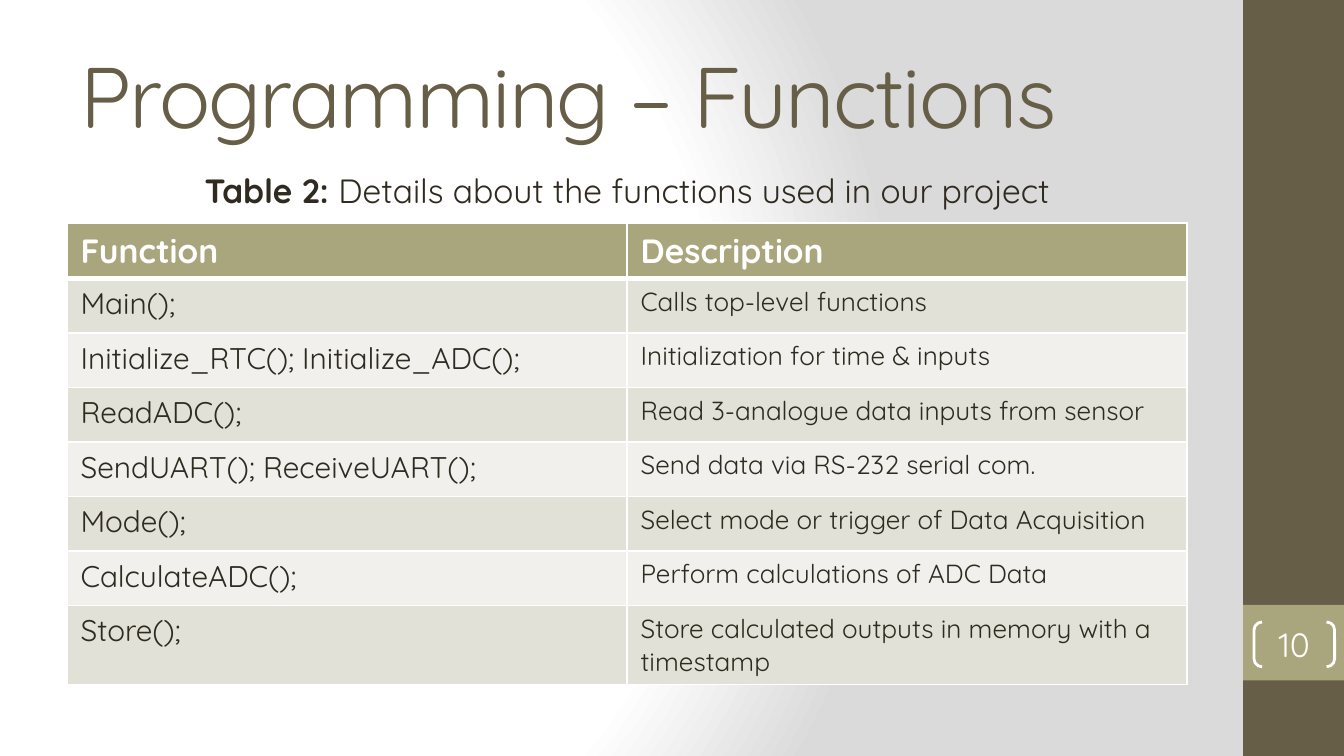
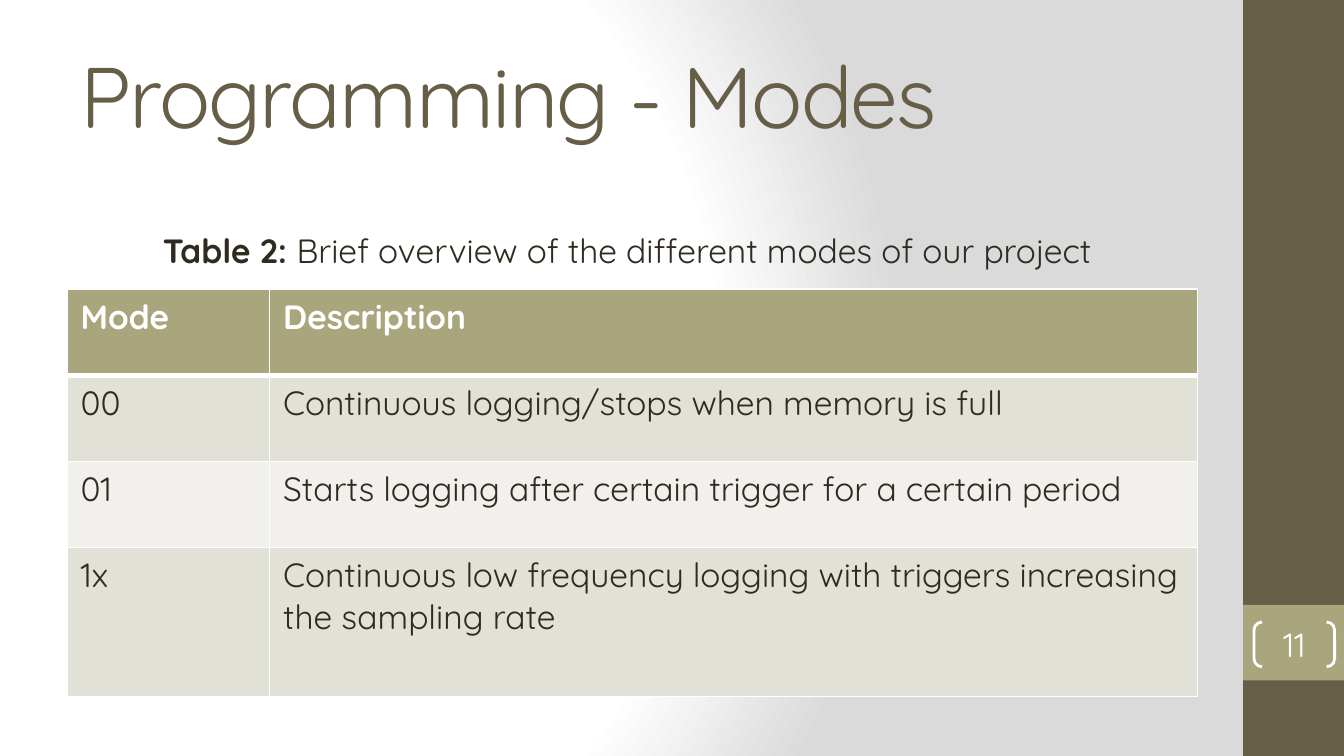
from dataclasses import dataclass

from lxml import etree
from pptx import Presentation
from pptx.dml.color import RGBColor
from pptx.enum import shapes, text
from pptx.oxml import parse_xml
from pptx.oxml import ns
from pptx.util import Pt

# Shared look
FONT = "Quicksand"
BROWN = RGBColor(0x67, 0x5E, 0x47)
OLIVE = RGBColor(0xA9, 0xA5, 0x7C)
INK = RGBColor(0x2F, 0x2B, 0x20)
WHITE = RGBColor(0xFF, 0xFF, 0xFF)
GREY = RGBColor(0xDA, 0xDA, 0xDA)
ROW_FILLS = (RGBColor(0xE2, 0xE1, 0xD7), RGBColor(0xF1, 0xF0, 0xEC))

SLIDE_WIDTH, SLIDE_HEIGHT = 720, 405
MARGIN = 36
CONTENT_WIDTH = 600
TITLE_ONLY = 5


@dataclass(frozen=True)
class Frame:
    left: float
    top: float
    width: float
    height: float

    def lengths(self) -> tuple:
        return Pt(self.left), Pt(self.top), Pt(self.width), Pt(self.height)


@dataclass(frozen=True)
class TablePage:
    title: str
    number: int
    caption: str
    caption_top: float
    table_top: float
    columns: tuple
    row_heights: tuple
    body_sizes: tuple
    rows: tuple


SIDE_BAND = Frame(666, 0, 54, SLIDE_HEIGHT)
NUMBER_BAND = Frame(666, 324, 54, 40.5)
NUMBER_BRACKETS = Frame(671.8, 333.2, 43.2, 24)
TITLE_FRAME = Frame(MARGIN, 16.8, CONTENT_WIDTH, 67.5)

PAGES = (
    TablePage(
        title="Programming – Functions",
        number=10,
        caption="Details about the functions used in our project",
        caption_top=87.4,
        table_top=119.4,
        columns=(300, 300),
        row_heights=(29.2,) * 8,
        body_sizes=(16, 14),
        rows=(
            ("Function", "Description"),
            ("Main();", "Calls top-level functions"),
            ("Initialize_RTC(); Initialize_ADC();", "Initialization for time & inputs"),
            ("ReadADC();", "Read 3-analogue data inputs from sensor"),
            ("SendUART(); ReceiveUART();", "Send data via RS-232 serial com."),
            ("Mode();", "Select mode or trigger of Data Acquisition"),
            ("CalculateADC();", "Perform calculations of ADC Data"),
            ("Store();", "Store calculated outputs in memory with a timestamp"),
        ),
    ),
    TablePage(
        title="Programming - Modes",
        number=11,
        caption="Brief overview of the different modes of our project",
        caption_top=119.6,
        table_top=154.8,
        columns=(108.5, 497),
        row_heights=(46.2, 46.2, 46.2, 79.8),
        body_sizes=(18, 18),
        rows=(
            ("Mode", "Description"),
            ("00", "Continuous logging/stops when memory is full"),
            ("01", "Starts logging after certain trigger for a certain period"),
            ("1x", "Continuous low frequency logging with triggers increasing "
                   "the sampling rate"),
        ),
    ),
)


def add_span(para, words: str, size: float, color: RGBColor, bold: bool = False):
    span = para.add_run()
    span.text = words
    span.font.name = FONT
    span.font.size = Pt(size)
    span.font.bold = bold
    span.font.color.rgb = color
    return span


def set_background(master) -> None:
    """Give every page the radial fade from white to grey."""
    master.background.fill.gradient()
    plain = master.element.find(".//" + ns.qn("a:gradFill"))
    stops = "".join(
        f'<a:gs pos="{place * 1000}"><a:srgbClr val="{color}"/></a:gs>'
        for place, color in ((0, WHITE), (75, WHITE), (100, GREY))
    )
    radial = parse_xml(
        f'<a:gradFill {ns.nsdecls("a")} rotWithShape="1"><a:gsLst>{stops}</a:gsLst>'
        '<a:path path="circle">'
        '<a:fillToRect l="20000" t="50000" r="100000" b="50000"/>'
        "</a:path></a:gradFill>"
    )
    plain.getparent().replace(plain, radial)


def add_band(page, frame: Frame, color: RGBColor) -> None:
    band = page.shapes.add_shape(shapes.MSO_SHAPE.RECTANGLE, *frame.lengths())
    band.shadow.inherit = False
    band.fill.solid()
    band.fill.fore_color.rgb = color
    band.line.fill.background()


def add_page_number(page, number: int) -> None:
    brackets = page.shapes.add_shape(
        shapes.MSO_SHAPE.DOUBLE_BRACKET, *NUMBER_BRACKETS.lengths())
    brackets.adjustments[0] = 0.18
    brackets.shadow.inherit = False
    brackets.fill.background()
    brackets.line.color.rgb = WHITE
    brackets.line.width = Pt(1.5)
    frame = brackets.text_frame
    frame.margin_left = frame.margin_right = frame.margin_top = frame.margin_bottom = 0
    frame.vertical_anchor = text.MSO_ANCHOR.MIDDLE
    para = frame.paragraphs[0]
    para.alignment = text.PP_ALIGN.CENTER
    add_span(para, str(number), 18, WHITE)


def format_title(page, words: str) -> None:
    title = page.shapes.title
    title.left, title.top, title.width, title.height = TITLE_FRAME.lengths()
    frame = title.text_frame
    frame.word_wrap = True
    frame.auto_size = text.MSO_AUTO_SIZE.NONE
    frame.vertical_anchor = text.MSO_ANCHOR.MIDDLE
    para = frame.paragraphs[0]
    para.alignment = text.PP_ALIGN.LEFT
    span = add_span(para, words, 46, BROWN)
    span.font._element.set("spc", "-100")


def add_caption(page, words: str, top: float) -> None:
    box = page.shapes.add_textbox(*Frame(MARGIN, top, CONTENT_WIDTH, 29).lengths())
    box.text_frame.word_wrap = True
    box.text_frame.auto_size = text.MSO_AUTO_SIZE.SHAPE_TO_FIT_TEXT
    para = box.text_frame.paragraphs[0]
    para.alignment = text.PP_ALIGN.CENTER
    add_span(para, "Table 2: ", 18, INK, bold=True)
    add_span(para, words, 18, INK)


def set_borders(cell, top: float, bottom: float) -> None:
    properties = cell._tc.get_or_add_tcPr()
    for side, width in (("L", 1), ("R", 1), ("T", top), ("B", bottom)):
        edge = etree.SubElement(properties, ns.qn(f"a:ln{side}"), w=str(Pt(width)))
        fill = etree.SubElement(edge, ns.qn("a:solidFill"))
        etree.SubElement(fill, ns.qn("a:srgbClr"), val=str(WHITE))


def add_table(page, content: TablePage) -> None:
    frame = Frame(MARGIN, content.table_top, sum(content.columns), sum(content.row_heights))
    table = page.shapes.add_table(
        len(content.rows), len(content.columns), *frame.lengths()).table
    for column, width in zip(table.columns, content.columns):
        column.width = Pt(width)
    for row, height in zip(table.rows, content.row_heights):
        row.height = Pt(height)
    for r, entries in enumerate(content.rows):
        header = r == 0
        for c, words in enumerate(entries):
            cell = table.cell(r, c)
            set_borders(cell, top=3 if r == 1 else 1, bottom=3 if header else 1)
            cell.fill.solid()
            cell.fill.fore_color.rgb = OLIVE if header else ROW_FILLS[(r - 1) % 2]
            add_span(
                cell.text_frame.paragraphs[0], words,
                size=18 if header else content.body_sizes[c],
                color=WHITE if header else INK, bold=header)


def add_page(deck, content: TablePage) -> None:
    page = deck.slides.add_slide(deck.slide_layouts[TITLE_ONLY])
    add_band(page, SIDE_BAND, BROWN)
    add_band(page, NUMBER_BAND, OLIVE)
    format_title(page, content.title)
    add_table(page, content)
    add_page_number(page, content.number)
    add_caption(page, content.caption, content.caption_top)


def main() -> None:
    deck = Presentation()
    deck.slide_width, deck.slide_height = Pt(SLIDE_WIDTH), Pt(SLIDE_HEIGHT)
    set_background(deck.slide_master)
    for content in PAGES:
        add_page(deck, content)
    deck.save("out.pptx")


if __name__ == "__main__":
    main()
